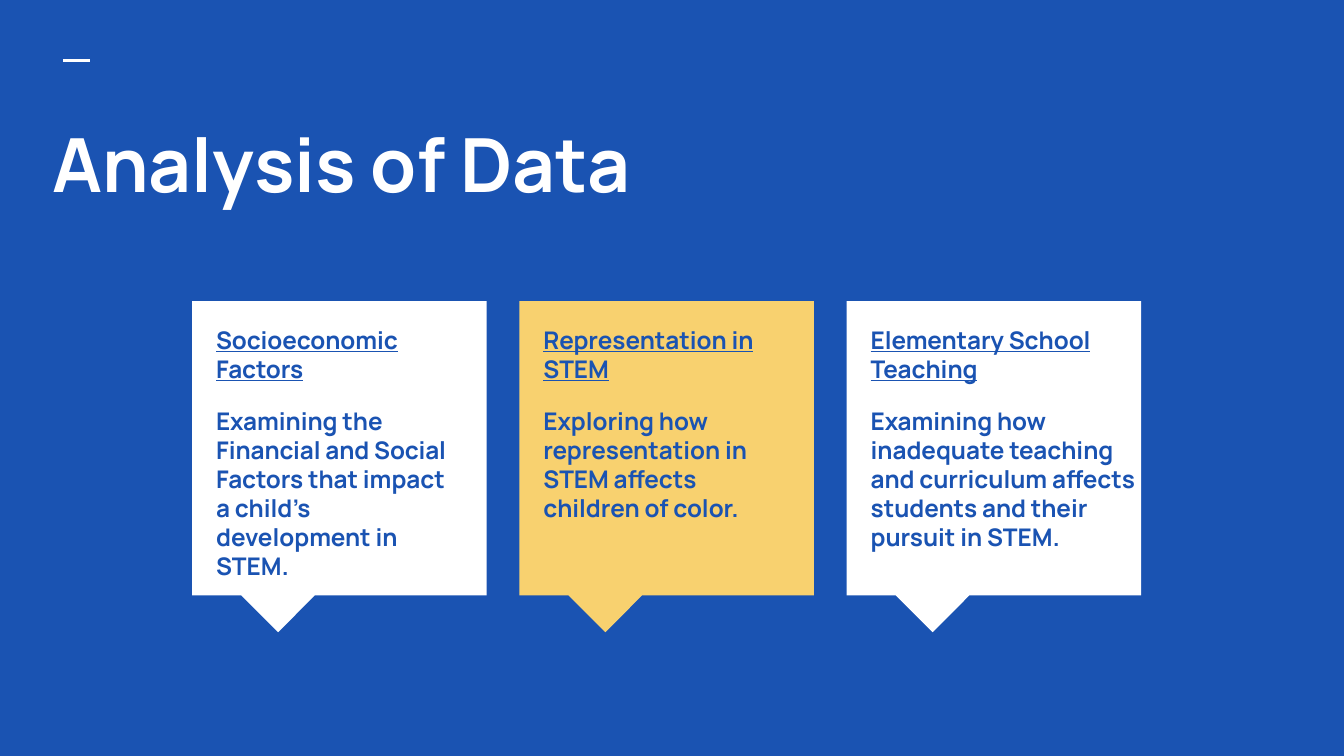
from dataclasses import dataclass

from lxml import etree
from pptx import Presentation
from pptx.dml.color import RGBColor
from pptx.enum.shapes import MSO_CONNECTOR, MSO_SHAPE
from pptx.enum.text import MSO_ANCHOR
from pptx.oxml.ns import qn
from pptx.slide import Slide
from pptx.util import Inches, Pt

CALLOUT = MSO_SHAPE.RECTANGULAR_CALLOUT
STRAIGHT = MSO_CONNECTOR.STRAIGHT
TOP = MSO_ANCHOR.TOP

FONT = "Manrope"
BLUE = "1A53B2"
WHITE = "FFFFFF"
YELLOW = "F8D16F"

CARD_LEFT, CARD_TOP, CARD_SIZE = 1.43, 2.24, 2.19
CARD_PITCH = 2.435
CARD_PADDING = 0.08
TEXT_HEIGHT = 1.95


@dataclass
class Card:
    heading: str
    body: str
    fill: str
    text_width: float


CARDS = [
    Card("Socioeconomic Factors",
         "Examining the Financial and Social Factors that impact a child’s development in STEM.",
         WHITE, 2),
    Card("Representation in STEM",
         "Exploring how representation in STEM affects children of color.",
         YELLOW, 2),
    Card("Elementary School Teaching",
         "Examining how inadequate teaching and curriculum affects students and their pursuit in STEM.",
         WHITE, 2.19),
]


def color(value: str) -> RGBColor:
    return RGBColor.from_string(value)


def add_text(slide: Slide, paragraphs: list[str], left: float, top: float,
             width: float, height: float, *, size: float, text_color: str,
             underline_first: bool = False, space_before: float = 0) -> None:
    """Add a bold text box; space_before applies from the second paragraph on."""
    box = slide.shapes.add_textbox(Inches(left), Inches(top), Inches(width), Inches(height))
    frame = box.text_frame
    frame.word_wrap = True
    frame.vertical_anchor = TOP
    frame.margin_left = frame.margin_right = Inches(0.1)
    frame.margin_top = frame.margin_bottom = Inches(0.1)
    for index, text in enumerate(paragraphs):
        paragraph = frame.add_paragraph() if index else frame.paragraphs[0]
        if index:
            paragraph.space_before = Pt(space_before)
        run = paragraph.add_run()
        run.text = text
        run.font.name = FONT
        run.font.size = Pt(size)
        run.font.bold = True
        run.font.underline = underline_first and index == 0
        run.font.color.rgb = color(text_color)


def add_accent_line(slide: Slide) -> None:
    line = slide.shapes.add_connector(
        STRAIGHT, Inches(0.47), Inches(0.45), Inches(0.67), Inches(0.45))
    line.line.color.rgb = color(WHITE)
    line.line.width = Pt(1.5)
    etree.SubElement(line._element.spPr, qn("a:effectLst"))


def add_card(slide: Slide, card: Card, left: float) -> None:
    callout = slide.shapes.add_shape(
        CALLOUT, Inches(left), Inches(CARD_TOP), Inches(CARD_SIZE), Inches(CARD_SIZE))
    callout.adjustments[0] = -0.208
    callout.adjustments[1] = 0.625
    callout.shadow.inherit = False
    callout.fill.solid()
    callout.fill.fore_color.rgb = color(card.fill)
    callout.line.fill.background()
    add_text(slide, [card.heading, card.body], left + CARD_PADDING, CARD_TOP + CARD_PADDING,
             card.text_width, TEXT_HEIGHT, size=13, text_color=BLUE,
             underline_first=True, space_before=12)


def main() -> None:
    presentation = Presentation()
    presentation.slide_width = Inches(10)
    presentation.slide_height = Inches(5.625)
    slide = presentation.slides.add_slide(presentation.slide_layouts[6])
    slide.background.fill.solid()
    slide.background.fill.fore_color.rgb = color(BLUE)

    add_accent_line(slide)
    add_text(slide, ["Analysis of Data"], 0.29, 0.78, 9.43, 1.12, size=40, text_color=WHITE)
    for index, card in enumerate(CARDS):
        add_card(slide, card, CARD_LEFT + index * CARD_PITCH)

    presentation.save("out.pptx")


if __name__ == "__main__":
    main()
